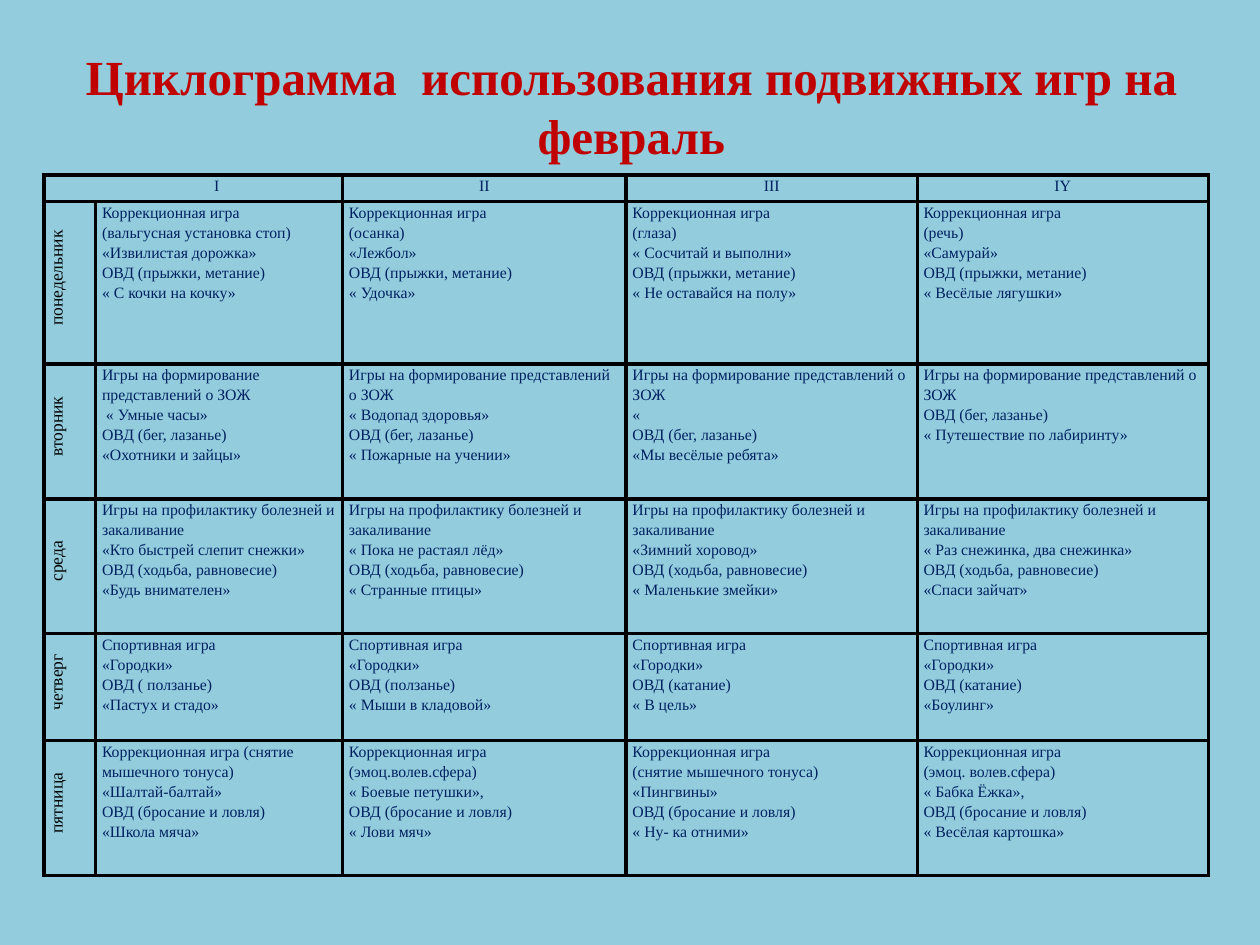
from lxml import etree
from pptx import Presentation
from pptx.dml.color import RGBColor
from pptx.enum import text as t
from pptx.oxml.ns import qn
from pptx.util import Inches, Pt

SKY = RGBColor(0x93, 0xCD, 0xDD)
RED = RGBColor(0xC0, 0x00, 0x00)
NAVY = RGBColor(0x00, 0x20, 0x60)
BLACK = RGBColor(0x00, 0x00, 0x00)
FONT = "Times New Roman"

TITLE = "Циклограмма  использования подвижных игр на февраль"
WEEKS = ["I", "II", "III", "IY"]
COLS = [0.41, 1.96, 2.25, 2.31, 2.31]
ROWS = [0.21, 1.29, 1.07, 1.07, 0.85, 1.07]
DAYS = [
    ("понедельник", "Коррекционная игра", [
        "|(вальгусная установка стоп)|«Извилистая дорожка»|ОВД (прыжки, метание)|« С кочки на кочку»",
        "|(осанка)|«Лежбол»|ОВД (прыжки, метание)|« Удочка»",
        "|(глаза)|« Сосчитай и выполни»|ОВД (прыжки, метание)|« Не оставайся на полу»",
        "|(речь)|«Самурай»|ОВД (прыжки, метание)|« Весёлые лягушки»",
    ]),
    ("вторник", "Игры на формирование представлений о ЗОЖ", [
        "| « Умные часы»|ОВД (бег, лазанье)|«Охотники и зайцы»",
        "|« Водопад здоровья»|ОВД (бег, лазанье)|« Пожарные на учении»",
        "|«|ОВД (бег, лазанье)|«Мы весёлые ребята»",
        "|ОВД (бег, лазанье)|« Путешествие по лабиринту»",
    ]),
    ("среда", "Игры на профилактику болезней и закаливание", [
        "|«Кто быстрей слепит снежки»|ОВД (ходьба, равновесие)|«Будь внимателен»",
        "|« Пока не растаял лёд»|ОВД (ходьба, равновесие)|« Странные птицы»",
        "|«Зимний хоровод»|ОВД (ходьба, равновесие)|« Маленькие змейки»",
        "|« Раз снежинка, два снежинка»|ОВД (ходьба, равновесие)|«Спаси зайчат»",
    ]),
    ("четверг", "Спортивная игра", [
        "|«Городки»|ОВД ( ползанье)|«Пастух и стадо»",
        "|«Городки»|ОВД (ползанье)|« Мыши в кладовой»",
        "|«Городки»|ОВД (катание)|« В цель»",
        "|«Городки»|ОВД (катание)|«Боулинг»",
    ]),
    ("пятница", "Коррекционная игра", [
        " (снятие мышечного тонуса)|«Шалтай-балтай»|ОВД (бросание и ловля)|«Школа мяча»",
        "|(эмоц.волев.сфера)|« Боевые петушки»,|ОВД (бросание и ловля)|« Лови мяч»",
        "|(снятие мышечного тонуса)|«Пингвины»|ОВД (бросание и ловля)|« Ну- ка отними»",
        "|(эмоц. волев.сфера)|« Бабка Ёжка»,|ОВД (бросание и ловля)|« Весёлая картошка»",
    ]),
]


def write(frame, words, size=9, color=NAVY, bold=False,
          align=t.PP_ALIGN.LEFT, space=1.15, indent=0):
    """Fill a text frame with one paragraph for each part of the words."""
    for i, line in enumerate(words.split("|")):
        para = frame.add_paragraph() if i else frame.paragraphs[0]
        para.alignment = align
        para.line_spacing = space
        if indent:
            para._p.get_or_add_pPr().set("marL", str(Inches(indent)))
        run = para.add_run()
        run.text = line
        font = run.font
        font.name, font.size, font.bold = FONT, Pt(size), bold
        font.color.rgb = color


def frame_cell(cell):
    """Give a cell its margins, clear fill and black borders."""
    cell.margin_left = cell.margin_right = Inches(0.05)
    cell.margin_top = cell.margin_bottom = 0
    cell.fill.background()
    props = cell._tc.get_or_add_tcPr()
    for i, side in enumerate(("lnL", "lnR", "lnT", "lnB")):
        line = etree.Element(qn(f"a:{side}"), w=str(Pt(2.25)))
        fill = etree.SubElement(line, qn("a:solidFill"))
        etree.SubElement(fill, qn("a:srgbClr"), val=str(BLACK))
        props.insert(i, line)


def add_title(slide, left, top, width, height):
    """Place the heading in the title placeholder."""
    title = slide.shapes.title
    title.left, title.top, title.width, title.height = left, top, width, height
    frame = title.text_frame
    frame.auto_size = t.MSO_AUTO_SIZE.NONE
    frame.word_wrap = True
    frame.vertical_anchor = t.MSO_ANCHOR.MIDDLE
    write(frame, TITLE, size=28, color=RED, bold=True,
          align=t.PP_ALIGN.CENTER, space=1.0)


def add_plan(slide, left, top, width, height):
    """Place the table of games by day and week."""
    table = slide.shapes.add_table(len(ROWS), len(COLS), left, top, width, height).table
    table.first_row = table.horz_banding = False
    for col, size in zip(table.columns, COLS):
        col.width = int(width * size / sum(COLS))
    for row, size in zip(table.rows, ROWS):
        row.height = int(height * size / sum(ROWS))
    for cell in table.iter_cells():
        frame_cell(cell)
    table.cell(0, 0).merge(table.cell(0, 1))
    for i, week in enumerate(WEEKS):
        cell = table.cell(0, i + 1 if i else 0)
        write(cell.text_frame, week, align=t.PP_ALIGN.CENTER, indent=0 if i else 0.37)
    for r, (day, theme, games) in enumerate(DAYS, 1):
        head = table.cell(r, 0)
        head._tc.get_or_add_tcPr().set("vert", "vert270")
        write(head.text_frame, day, size=10, color=BLACK,
              align=t.PP_ALIGN.CENTER, indent=0.08)
        for c, game in enumerate(games, 1):
            write(table.cell(r, c).text_frame, theme + game)


def main():
    """Build and save the slide."""
    deck = Presentation()
    deck.slide_width, deck.slide_height = Inches(10), Inches(7.5)
    slide = deck.slides.add_slide(deck.slide_layouts[5])
    fill = slide.background.fill
    fill.solid()
    fill.fore_color.rgb = SKY
    add_title(slide, Inches(0.51), Inches(0.21), Inches(9), Inches(1.25))
    add_plan(slide, Inches(0.35), Inches(1.39), Inches(9.24), Inches(5.56))
    deck.save("out.pptx")


if __name__ == "__main__":
    main()
